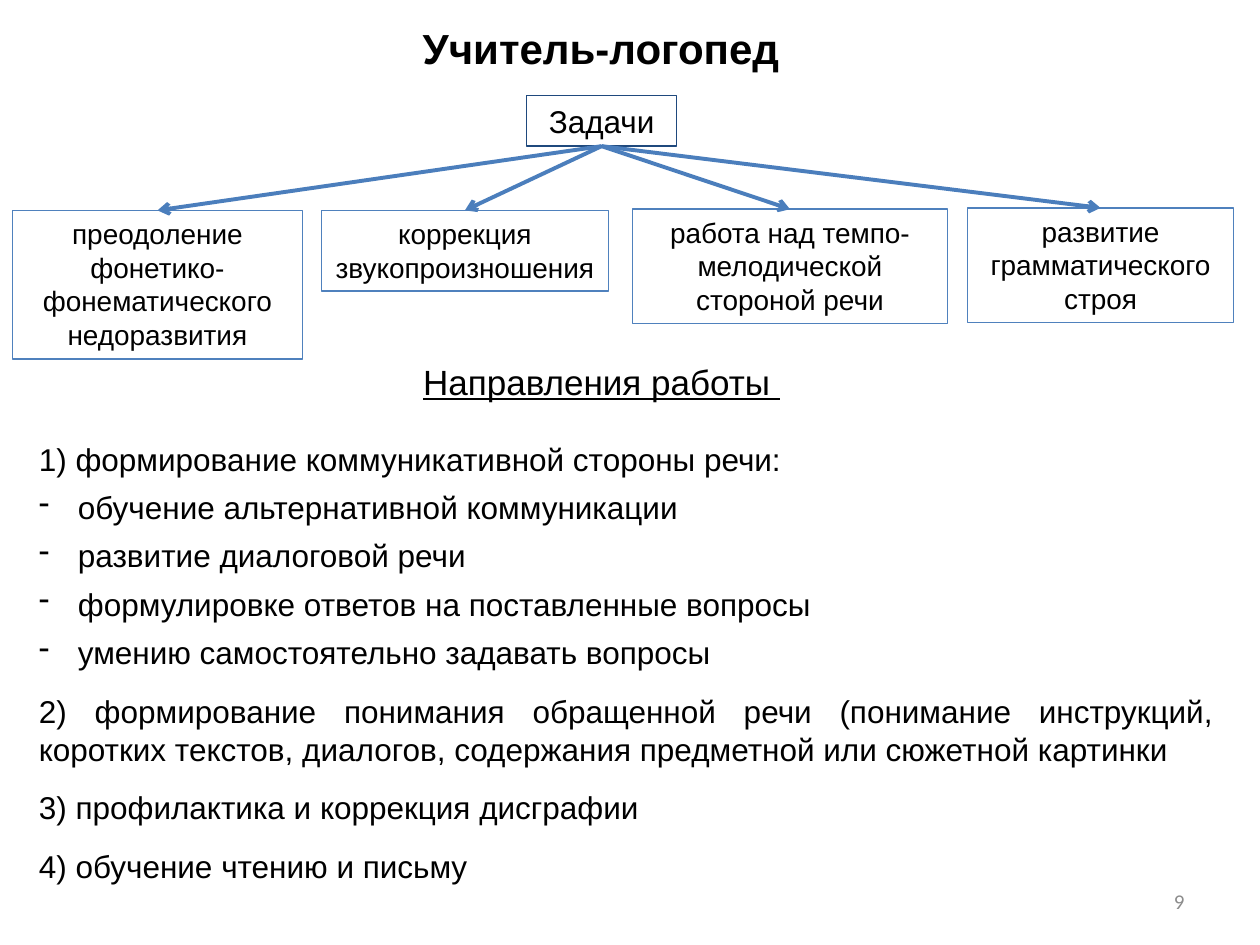
from lxml import etree
from pptx import Presentation
from pptx.dml.color import RGBColor
from pptx.enum.shapes import MSO_CONNECTOR, MSO_SHAPE
from pptx.enum.text import MSO_ANCHOR, MSO_AUTO_SIZE, PP_ALIGN
from pptx.oxml.ns import qn
from pptx.util import Inches, Pt

LEFT, CENTER, RIGHT, JUSTIFY = (
    PP_ALIGN.LEFT, PP_ALIGN.CENTER, PP_ALIGN.RIGHT, PP_ALIGN.JUSTIFY)
TOP, MIDDLE = MSO_ANCHOR.TOP, MSO_ANCHOR.MIDDLE
BOTTOM_SITE, TOP_SITE = 2, 0

W, H = 10, 7.5
BLACK, GREY, NAVY, BLUE, ARROW = "000000", "8C8C8C", "1F497D", "4F81BD", "4B7EBC"

# left, top, width, height, text
TASKS = [
    (0.1, 1.67, 2.3, 1.18, "преодоление фонетико-фонематического недоразвития"),
    (2.55, 1.67, 2.28, 0.64, "коррекция звукопроизношения"),
    (5.02, 1.66, 2.5, 0.91, "работа над темпо-мелодической стороной речи"),
    (7.68, 1.65, 2.11, 0.91, "развитие грамматического строя"),
]
# text, paragraph format
DIRECTIONS = [
    ("1) формирование коммуникативной стороны речи:", {"before": 6}),
    ("обучение альтернативной коммуникации", {"bullet": "-"}),
    ("развитие диалоговой речи", {"bullet": "-"}),
    ("формулировке ответов на поставленные вопросы", {"bullet": "-"}),
    ("умению самостоятельно задавать вопросы", {"bullet": "-"}),
    ("2) формирование понимания обращенной речи (понимание инструкций, "
     "коротких текстов, диалогов, содержания предметной или сюжетной картинки",
     {"before": 6, "align": JUSTIFY}),
    ("3) профилактика и коррекция дисграфии", {"before": 6}),
    ("4) обучение чтению и письму", {"before": 6}),
]


def rgb(color):
    return RGBColor.from_string(color)


def write(p, text, size=18, font="Arial", color=BLACK, bold=False,
          underline=False, align=LEFT, before=0, after=0, bullet=None):
    p.alignment = align
    p.space_before, p.space_after = Pt(before), Pt(after)
    if bullet:
        pPr = p._p.get_or_add_pPr()
        pPr.set("marL", str(Inches(0.31)))
        pPr.set("indent", str(-Inches(0.31)))
        etree.SubElement(pPr, qn("a:buChar"), char=bullet)
    r = p.add_run()
    r.text = text
    f = r.font
    f.size, f.name, f.bold, f.underline = Pt(size), font, bold, underline
    f.color.rgb = rgb(color)


def frame(sp, anchor=TOP):
    tf = sp.text_frame
    tf.word_wrap = True
    tf.auto_size = MSO_AUTO_SIZE.NONE
    tf.vertical_anchor = anchor
    return tf


def add_title(s, at, text):
    sp = s.shapes.title
    sp.left, sp.top, sp.width, sp.height = map(Inches, at)
    write(frame(sp).paragraphs[0], text, size=24, bold=True, align=CENTER)


def add_text(s, at, paragraphs, anchor=TOP, **fmt):
    tf = frame(s.shapes.add_textbox(*map(Inches, at)), anchor)
    for i, (text, extra) in enumerate(paragraphs):
        p = tf.add_paragraph() if i else tf.paragraphs[0]
        write(p, text, **{**fmt, **extra})


def add_box(s, at, text, line, size):
    sp = s.shapes.add_shape(MSO_SHAPE.RECTANGLE, *map(Inches, at))
    sp.shadow.inherit = False
    sp.fill.background()
    sp.line.color.rgb = rgb(line)
    sp.line.width = Pt(0.75)
    write(frame(sp).paragraphs[0], text, size=size, align=CENTER)
    return sp


def add_arrow(s, start, end):
    c = s.shapes.add_connector(MSO_CONNECTOR.STRAIGHT, 0, 0, 0, 0)
    c.begin_connect(start, BOTTOM_SITE)
    c.end_connect(end, TOP_SITE)
    c.line.color.rgb = rgb(ARROW)
    c.line.width = Pt(2.25)
    etree.SubElement(c.line._get_or_add_ln(), qn("a:tailEnd"), type="arrow")
    etree.SubElement(c._element.spPr, qn("a:effectLst"))


def main():
    prs = Presentation()
    prs.slide_width, prs.slide_height = Inches(W), Inches(H)
    s = prs.slides.add_slide(prs.slide_layouts[5])

    add_title(s, (2.33, 0.13, 4.88, 0.5), "Учитель-логопед")
    root = add_box(s, (4.18, 0.76, 1.19, 0.4), "Задачи", NAVY, 18)
    boxes = [add_box(s, at, text, BLUE, 16) for *at, text in TASKS]
    for box in boxes:
        add_arrow(s, root, box)

    add_text(s, (3.23, 2.81, 3.09, 0.44), [("Направления работы ", {})],
             size=20, underline=True, align=CENTER)
    add_text(s, (0.21, 3.44, 9.52, 3.67), DIRECTIONS, after=6)
    add_text(s, (7.17, 6.95, 2.33, 0.4), [("9", {})], anchor=MIDDLE,
             size=12, font="Calibri", color=GREY, align=RIGHT)
    prs.save("out.pptx")


if __name__ == "__main__":
    main()
